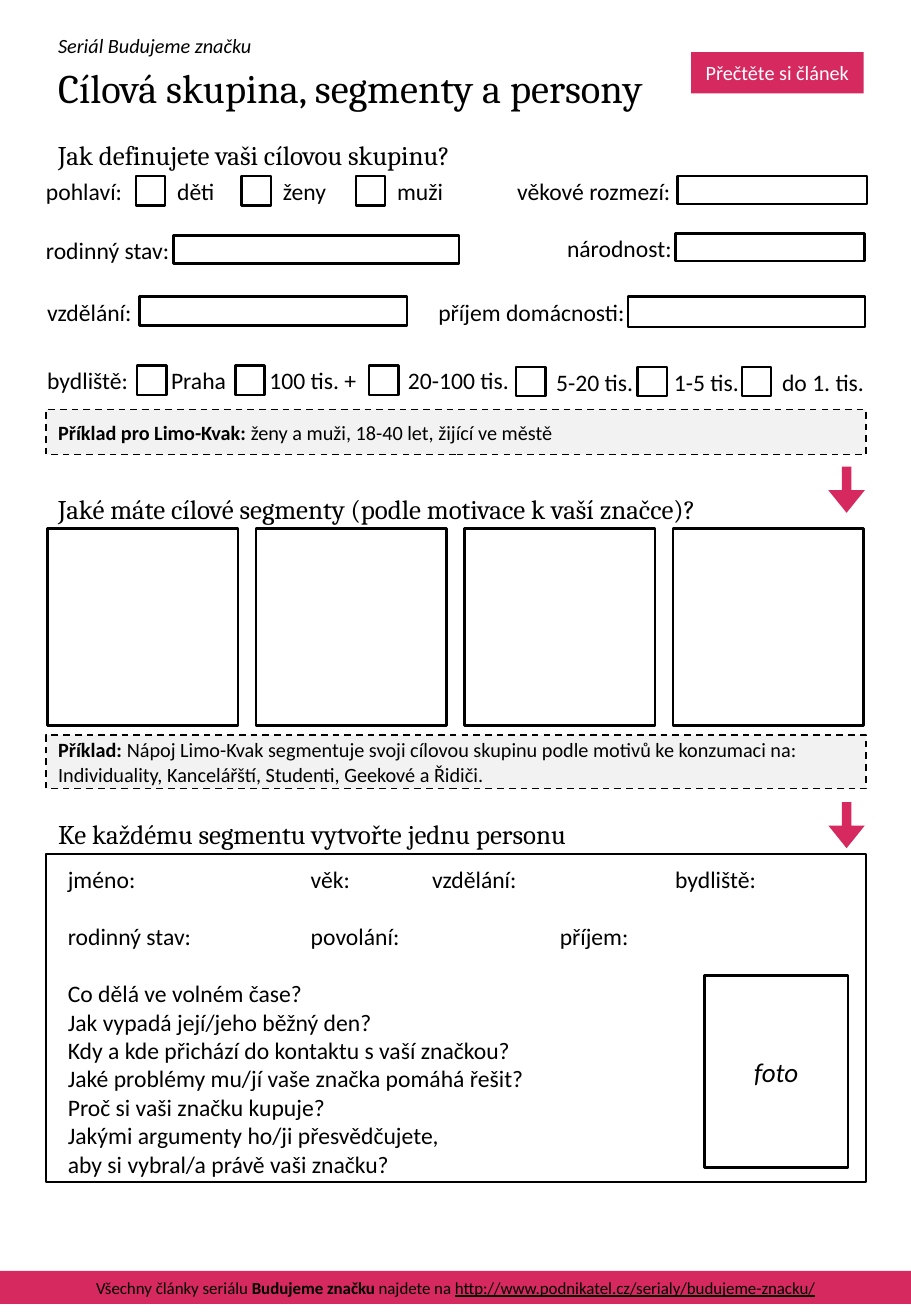
from pptx import Presentation
from pptx.dml.color import RGBColor
from pptx.enum.dml import MSO_LINE
from pptx.enum.shapes import MSO_SHAPE
from pptx.enum.text import MSO_ANCHOR, MSO_AUTO_SIZE, PP_ALIGN
from pptx.util import Inches, Pt
from lxml.etree import SubElement
from pptx.oxml.ns import qn

BLACK = RGBColor(0, 0, 0)
WHITE = RGBColor(255, 255, 255)
GREY = RGBColor(0xF2, 0xF2, 0xF2)
PINK = RGBColor(0xD6, 0x29, 0x60)

deck = Presentation()
deck.slide_width, deck.slide_height = Inches(7.5), Inches(10.83)
slide = deck.slides.add_slide(deck.slide_layouts[6])
shapes = slide.shapes

# The page is a grid of square cells, 75 to its width
CELL = deck.slide_width // 75
COLS, ROWS = 75, 108.3
LEFT, WIDE = 3.8, 67.5


def draw(x, y, w, h, fill=WHITE, line=1.5, dash=False, kind=MSO_SHAPE.RECTANGLE):
    """Add a preset shape placed in grid cells; fill or line may be None."""
    shape = shapes.add_shape(kind, *(int(n * CELL) for n in (x, y, w, h)))
    shape.shadow.inherit = False
    if fill is None:
        shape.fill.background()
    else:
        shape.fill.solid()
        shape.fill.fore_color.rgb = fill
    if line is None:
        shape.line.fill.background()
    else:
        shape.line.color.rgb = BLACK
        shape.line.width = Pt(line)
        if dash:
            shape.line.dash_style = MSO_LINE.DASH
    return shape


def write(place, *lines, size=14, face="Calibri", color=BLACK, align=PP_ALIGN.LEFT,
          anchor=MSO_ANCHOR.MIDDLE, wrap=True):
    """Fill a shape, or a new text box at a grid place, with lines of (text, style) runs."""
    if isinstance(place, tuple):
        place = shapes.add_textbox(*(int(n * CELL) for n in place))
        place.text_frame.auto_size = MSO_AUTO_SIZE.NONE
    frame = place.text_frame
    frame.word_wrap = wrap
    frame.vertical_anchor = anchor
    for i, line in enumerate(lines):
        para = frame.add_paragraph() if i else frame.paragraphs[0]
        para.alignment = align
        for text, style in [(line, "")] if isinstance(line, str) else line:
            run = para.add_run()
            run.text = text
            font = run.font
            font.size, font.name, font.color.rgb = Pt(size), face, color
            font.bold, font.italic, font.underline = (key in style for key in "biu")
    return frame


# Footer and header
write(draw(0, 104.6, COLS, 2.7, PINK, None),
      [("Všechny články seriálu ", ""), ("Budujeme značku ", "b"), ("najdete na ", ""),
       ("http://www.podnikatel.cz/serialy/budujeme-znacku/", "u")],
      size=10, align=PP_ALIGN.CENTER)
write((LEFT, 2.2, 40, 3), [("Seriál Budujeme značku", "i")], size=12)
write((LEFT, 4.3, WIDE, 5.7), "Cílová skupina, segmenty a persony", size=24, face="Cambria")
write(draw(56.9, 4.3, 14.2, 3.4, PINK, None), "Přečtěte si článek",
      size=12, color=WHITE, align=PP_ALIGN.CENTER)

# Section headings and the arrows that lead to them
for y, text in [(10.9, "Jak definujete vaši cílovou skupinu?"),
                (40, "Jaké máte cílové segmenty (podle motivace k vaší značce)?"),
                (66.8, "Ke každému segmentu vytvořte jednu personu")]:
    write((LEFT, y, 64.5, 3.7), text, size=16, face="Cambria")
for y in (38.4, 66):
    arrow = draw(68.2, y, 3, 3.8, PINK, None, kind=MSO_SHAPE.DOWN_ARROW)
    arrow.adjustments[0], arrow.adjustments[1] = 0.26, 0.62

# Examples
for y, h, lead, text in [
        (33.7, 3.7, "Příklad pro Limo-Kvak: ", "ženy a muži, 18-40 let, žijící ve městě"),
        (60.5, 4.4, "Příklad: ", "Nápoj Limo-Kvak segmentuje svoji cílovou skupinu podle motivů "
         "ke konzumaci na: Individuality, Kancelářští, Studenti, Geekové a Řidiči.")]:
    write(draw(LEFT, y, WIDE, h, GREY, 1, True), [(lead, "b"), (text, "")], size=12)

# Fields and tick boxes of the target group
for x, y, w, h in [(55.8, 14.5, 15.6, 2.3), (55.6, 19.2, 15.6, 2.3), (14.3, 19.4, 23.5, 2.3),
                   (11.5, 24.4, 22, 2.4), (51.7, 24.4, 19.5, 2.5)]:
    draw(x, y, w, h)
for y, ticks in [(14.5, (11.2, 19.9, 29.3)), (30.1, (11.3, 19.4, 30.4)),
                 (30.2, (42.5, 52.5, 61.1))]:
    for x in ticks:
        draw(x, y, 2.4, 2.4)
for x, y, w, text in [
        (2.8, 14, 8.4, "pohlaví:"), (13.6, 14, 5.1, "děti"), (22.3, 14, 5.6, "ženy"),
        (31.7, 14, 5.8, "muži"), (41.6, 14, 14.7, "věkové rozmezí:"),
        (2.8, 18.9, 12.3, "rodinný stav:"), (45.7, 18.7, 10.7, "národnost:"),
        (2.9, 24, 9.1, "vzdělání:"), (35.1, 24, 17.5, "příjem domácnosti:"),
        (2.9, 29.6, 8.8, "bydliště:"), (13.1, 29.6, 6.6, "Praha"),
        (21.2, 29.6, 9.3, "100 tis. +"), (32.6, 29.6, 10.4, "20-100 tis."),
        (44.8, 29.7, 8.4, "5-20 tis."), (54.5, 29.7, 7.4, "1-5 tis."),
        (63.4, 29.7, 8.8, "do 1. tis.")]:
    write((x, y, w, 3.4), text, wrap=False)

# Segments
for i in range(4):
    draw(3.9 + 17.17 * i, 43.5, 15.7, 16.2)

# Persona
draw(LEFT, 70.3, WIDE, 27, None, 1)
card = write((4.6, 70.7, 66.5, 29.3),
             "jméno:\tvěk:\tvzdělání:\tbydliště:",
             "rodinný stav:\tpovolání:\tpříjem:",
             "Co dělá ve volném čase?",
             "Jak vypadá její/jeho běžný den?",
             "Kdy a kde přichází do kontaktu s vaší značkou?",
             "Jaké problémy mu/jí vaše značka pomáhá řešit?",
             "Proč si vaši značku kupuje?",
             "Jakými argumenty ho/ji přesvědčujete,",
             "aby si vybral/a právě vaši značku?", anchor=MSO_ANCHOR.TOP)
for para, stops in zip(card.paragraphs, [(20, 30, 50), (20, 40.5)]):
    tabs = SubElement(para._p.get_or_add_pPr(), qn("a:tabLst"))
    for stop in stops:
        SubElement(tabs, qn("a:tab"), pos=str(int(stop * CELL)), algn="l")
for para in card.paragraphs[1:3]:
    para.space_before = Pt(17)
write(draw(58, 80.3, 11.8, 15.8), [("foto", "i")], size=16, align=PP_ALIGN.CENTER)

deck.save("out.pptx")
